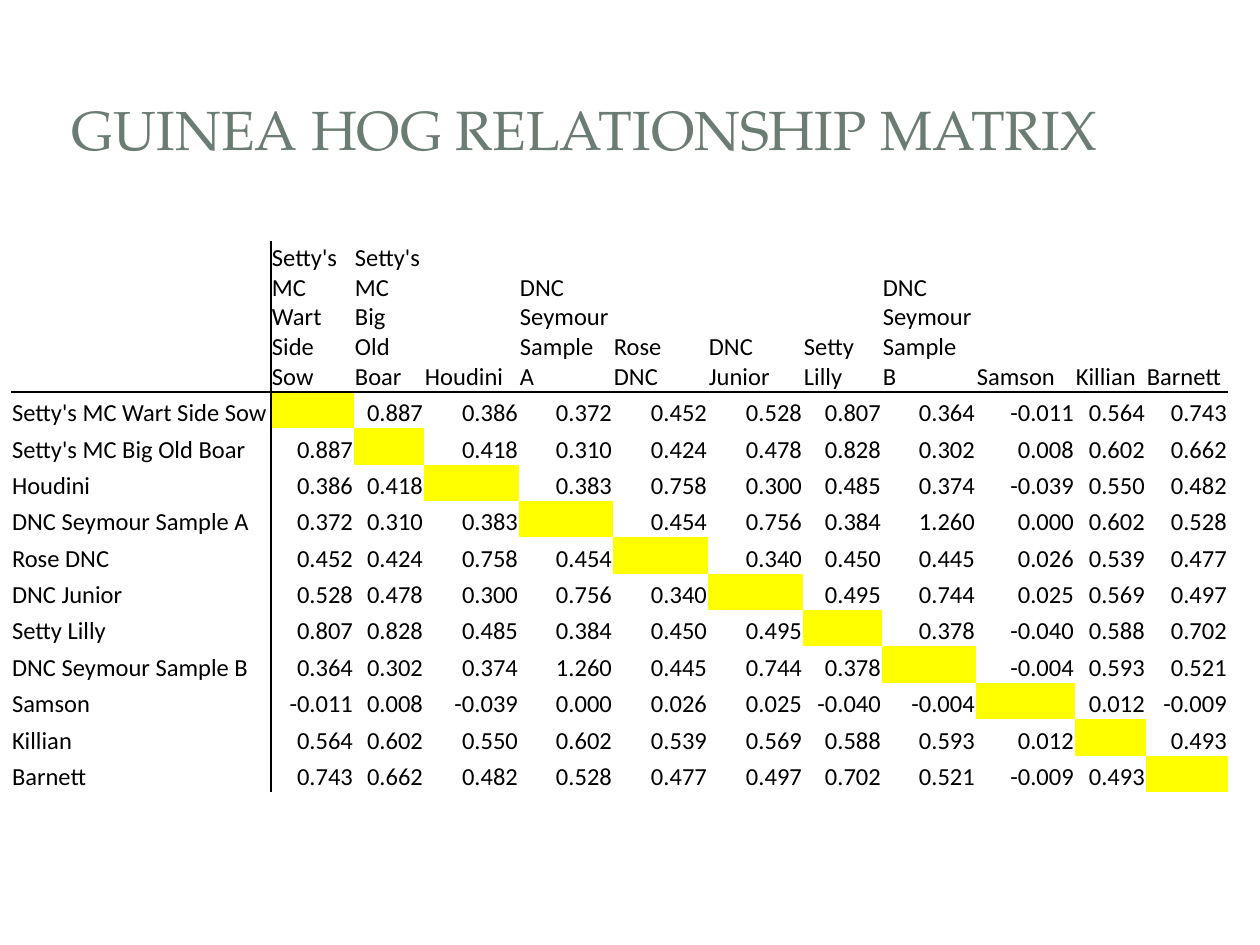
"""Build the guinea hog relationship matrix slide."""
from lxml.etree import SubElement
from pptx import Presentation
from pptx.dml.color import RGBColor as RGB
from pptx.enum.shapes import MSO_SHAPE as SHAPE
from pptx.enum.text import MSO_ANCHOR as ANCHOR, PP_ALIGN as ALIGN
from pptx.oxml.ns import qn
from pptx.util import Emu, Pt

THEME = {
    "title": {"name": "TeX Gyre Pagella", "size": Pt(31.5), "color": "6B7D72"},
    "body": {"name": "Calibri", "size": Pt(14), "color": "000000"},
    "panel": "FFFFFF",
    "diagonal": "FFFF00",
    "rule": "000000",
    "rule_width": Pt(1),
    "plain_table": "{2D5ABB26-0587-4C30-8999-92F81FD0307C}",
}
PANELS = [
    (SHAPE.ROUNDED_RECTANGLE, (13, 14, 1235, 919), 100),
    (SHAPE.RECTANGLE, (38, 38, 1184, 183), 83),
    (SHAPE.RECTANGLE, (52, 52, 1207, 154), 100),
]
HOGS = ["Setty's MC Wart Side Sow", "Setty's MC Big Old Boar", "Houdini",
        "DNC Seymour Sample A", "Rose DNC", "DNC Junior", "Setty Lilly",
        "DNC Seymour Sample B", "Samson", "Killian", "Barnett"]
LOWER = [
    [],
    [0.887],
    [0.386, 0.418],
    [0.372, 0.310, 0.383],
    [0.452, 0.424, 0.758, 0.454],
    [0.528, 0.478, 0.300, 0.756, 0.340],
    [0.807, 0.828, 0.485, 0.384, 0.450, 0.495],
    [0.364, 0.302, 0.374, 1.260, 0.445, 0.744, 0.378],
    [-0.011, 0.008, -0.039, 0.000, 0.026, 0.025, -0.040, -0.004],
    [0.564, 0.602, 0.550, 0.602, 0.539, 0.569, 0.588, 0.593, 0.012],
    [0.743, 0.662, 0.482, 0.528, 0.477, 0.497, 0.702, 0.521, -0.009, 0.493],
]
COLUMNS = [260, 83, 70, 95, 94, 95, 95, 79, 94, 99, 71, 82]
HEADER, BODY = 151, 400


def px(n):
    return Emu(round(n * 914400 / 126))


def write(p, text, style):
    r = p.add_run()
    r.text = text
    r.font.name, r.font.size = style["name"], style["size"]
    r.font.color.rgb = RGB.from_string(style["color"])


prs = Presentation()
prs.slide_width, prs.slide_height = px(1260), px(945)
s = prs.slides.add_slide(prs.slide_layouts[6])

for kind, box, opacity in PANELS:
    sp = s.shapes.add_shape(kind, *map(px, box))
    sp.shadow.inherit = False
    sp.line.fill.background()
    sp.fill.solid()
    sp.fill.fore_color.rgb = RGB.from_string(THEME["panel"])
    if kind == SHAPE.ROUNDED_RECTANGLE:
        sp.adjustments[0] = 0.02
    if opacity < 100:
        color = sp._element.spPr.find(qn("a:solidFill"))[0]
        SubElement(color, qn("a:alpha"), val=str(opacity * 1000))

title = s.shapes.add_textbox(px(59), px(56), px(1138), px(144))
tf = title.text_frame
for key, value in {"word_wrap": True, "vertical_anchor": ANCHOR.MIDDLE,
                   "margin_left": px(13), "margin_right": px(13)}.items():
    setattr(tf, key, value)
write(tf.paragraphs[0], "GUINEA HOG RELATIONSHIP MATRIX", THEME["title"])

n = len(HOGS) + 1
frame = s.shapes.add_table(n, n, px(11), px(241), px(sum(COLUMNS)), px(HEADER + BODY))
table = frame.table
table.first_row = table.horz_banding = False
table._tbl.tblPr.find(qn("a:tableStyleId")).text = THEME["plain_table"]
for column, width in zip(table.columns, COLUMNS):
    column.width = px(width)
for i, row in enumerate(table.rows):
    row.height = px(BODY) // len(HOGS) if i else px(HEADER)

cell_format = {"margin_left": px(1), "margin_right": px(1), "margin_top": px(1),
               "margin_bottom": 0, "vertical_anchor": ANCHOR.BOTTOM}
for i in range(n):
    for j in range(n):
        cell = table.cell(i, j)
        for key, value in cell_format.items():
            setattr(cell, key, value)

        edges = {"a:lnL": j == 1, "a:lnR": j == 0, "a:lnT": i == 1, "a:lnB": i == 0}
        for tag, ruled in edges.items():
            ln = SubElement(cell._tc.get_or_add_tcPr(), qn(tag))
            if ruled:
                ln.set("w", str(THEME["rule_width"]))
                SubElement(SubElement(ln, qn("a:solidFill")), qn("a:srgbClr"), val=THEME["rule"])
            else:
                SubElement(ln, qn("a:noFill"))

        p = cell.text_frame.paragraphs[0]
        if i == j:
            size = str(int(THEME["body"]["size"].pt * 100))
            SubElement(p._p, qn("a:endParaRPr"), sz=size)
        elif i and j:
            p.alignment = ALIGN.RIGHT
            write(p, f"{LOWER[max(i, j) - 1][min(i, j) - 1]:.3f}", THEME["body"])
        else:
            write(p, HOGS[max(i, j) - 1], THEME["body"])

        if i == j and i:
            cell.fill.solid()
            cell.fill.fore_color.rgb = RGB.from_string(THEME["diagonal"])
        else:
            cell.fill.background()

prs.save("out.pptx")
